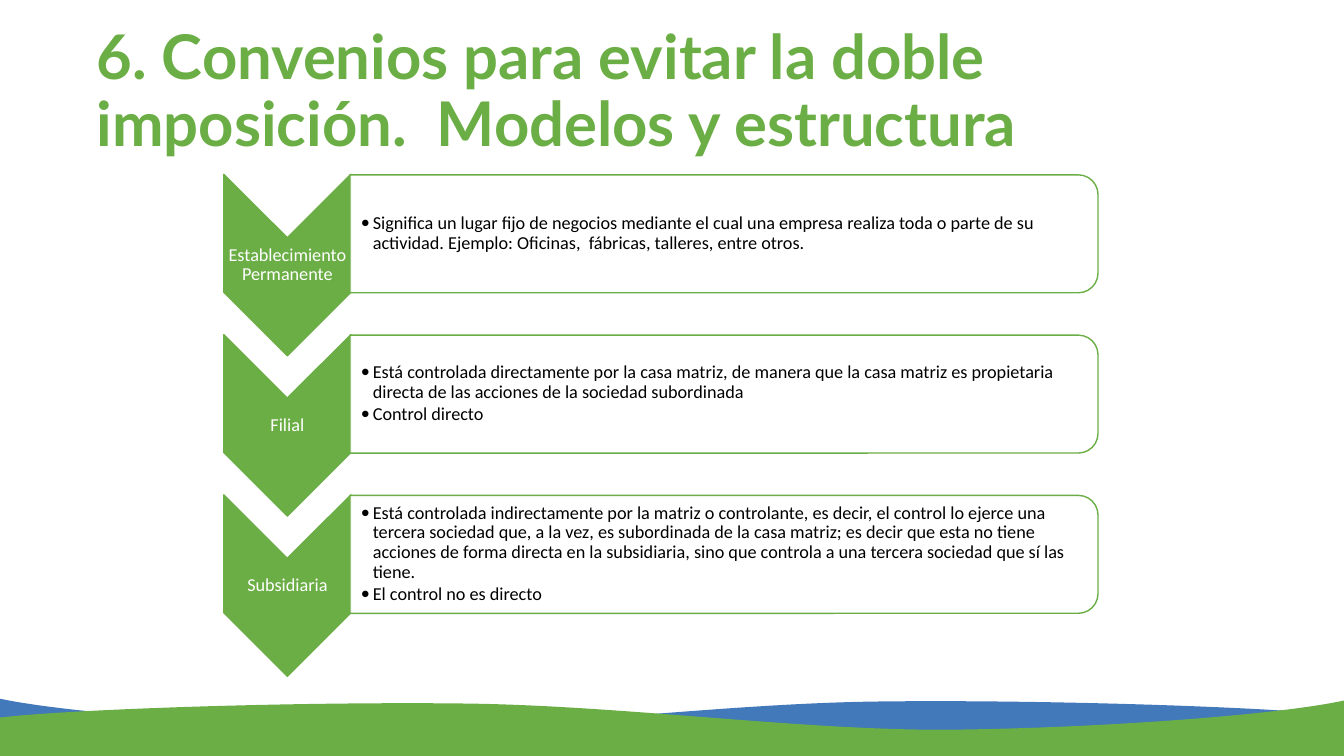
from lxml.etree import SubElement
from pptx import Presentation
from pptx.dml.color import RGBColor
from pptx.enum.shapes import MSO_SHAPE
from pptx.enum.text import MSO_ANCHOR, PP_ALIGN
from pptx.oxml.ns import qn
from pptx.util import Inches, Pt

GREEN = RGBColor(0x6B, 0xAE, 0x45)
BLUE = RGBColor(0x42, 0x79, 0xBB)
WHITE = RGBColor(0xFF, 0xFF, 0xFF)
BLACK = RGBColor(0, 0, 0)

# Start of the wave, three Bézier segments of three points each, lower corners
WAVE = [
    (13.33, 7.1),
    (12.56, 7.01), (10.26, 6.94), (8.7, 6.96),
    (7.15, 6.98), (5.43, 7.22), (3.98, 7.22),
    (2.53, 7.21), (0.68, 7.08), (-0.01, 6.93),
    (-0.01, 7.5), (13.33, 7.5),
]

ITEMS = [
    ("Establecimiento Permanente", [
        "Significa un lugar fijo de negocios mediante el cual una empresa realiza "
        "toda o parte de su actividad. Ejemplo: Oficinas,  fábricas, talleres, "
        "entre otros."]),
    ("Filial", [
        "Está controlada directamente por la casa matriz, de manera que la casa "
        "matriz es propietaria directa de las acciones de la sociedad subordinada",
        "Control directo"]),
    ("Subsidiaria", [
        "Está controlada indirectamente por la matriz o controlante, es decir, el "
        "control lo ejerce una tercera sociedad que, a la vez, es subordinada de la "
        "casa matriz; es decir que esta no tiene acciones de forma directa en la "
        "subsidiaria, sino que controla a una tercera sociedad que sí las tiene.",
        "El control no es directo"]),
]
TOP, PITCH = 1.79, 1.59

prs = Presentation()
prs.slide_width = Inches(13.33)
prs.slide_height = Inches(7.5)
slide = prs.slides.add_slide(prs.slide_layouts[6])
shapes = slide.shapes


def add_text(box, lines, size, font, color, bold=False, align=PP_ALIGN.LEFT, pad=None):
    """Add a text box with one paragraph per line; pad is (left, other sides)."""
    frame = shapes.add_textbox(*[Inches(v) for v in box]).text_frame
    frame.word_wrap = True
    frame.vertical_anchor = MSO_ANCHOR.MIDDLE
    if pad:
        frame.margin_left = Inches(pad[0])
        frame.margin_top = frame.margin_right = frame.margin_bottom = Inches(pad[1])
    for i, line in enumerate(lines):
        para = frame.add_paragraph() if i else frame.paragraphs[0]
        para.alignment = align
        para.line_spacing = 0.9
        run = para.add_run()
        run.text = line
        run.font.size = Pt(size)
        run.font.name = font
        run.font.bold = bold
        run.font.color.rgb = color
    return frame


def add_turned(kind, mid_x, mid_y, width, height, fill):
    """Add a green-edged shape turned by 90 degrees about its middle."""
    shape = shapes.add_shape(kind, Inches(mid_x - width / 2), Inches(mid_y - height / 2),
                             Inches(width), Inches(height))
    shape.rotation = 90
    shape.shadow.inherit = False
    shape.fill.solid()
    shape.fill.fore_color.rgb = fill
    shape.line.color.rgb = GREEN
    shape.line.width = Pt(1)
    return shape


# Footer waves: the green one mirrors the blue one, slightly lower
mirror = [(13.32 - x, y + 0.02) for x, y in WAVE]
for points, color in ((WAVE, BLUE), (mirror, GREEN)):
    spots = [(Inches(x), Inches(y)) for x, y in points]
    pen = shapes.build_freeform(*spots[0])
    pen.add_line_segments(spots[1:], close=True)
    wave = pen.convert_to_shape()
    wave.shadow.inherit = False
    wave.fill.solid()
    wave.fill.fore_color.rgb = color
    wave.line.fill.background()
    # Turn the first nine straight segments into three curves
    sides = list(wave._element.iter(qn("a:lnTo")))
    for first in (0, 3, 6):
        trio = sides[first:first + 3]
        trio[0].tag = qn("a:cubicBezTo")
        for side in trio[1:]:
            trio[0].append(side[0])
            side.getparent().remove(side)

add_text((0.86, 0.2, 11.5, 1.45),
         ["6. Convenios para evitar la doble imposición.  Modelos y estructura"],
         44, "Lato", GREEN, bold=True)

for row, (label, points) in enumerate(ITEMS):
    top = TOP + PITCH * row
    add_turned(MSO_SHAPE.CHEVRON, 2.85, top + 0.84, 1.8, 1.26, GREEN)
    add_text((2.22, top + 0.57, 1.26, 0.54), [label], 13, "Calibri", WHITE,
             align=PP_ALIGN.CENTER, pad=(0.01, 0.01))

    panel = add_turned(MSO_SHAPE.ROUND_2_SAME_RECTANGLE, 7.18, top + 0.53,
                       1.17, 7.42, WHITE)
    tint = panel.fill._xPr.find(qn("a:solidFill"))[0]
    SubElement(tint, qn("a:alpha")).set("val", "90000")

    frame = add_text((3.48, top, 7.36, 1.05), points, 13, "Calibri", BLACK,
                     pad=(0.1, 0.01))
    for para in frame.paragraphs:
        para.level = 1
        para.space_after = Pt(2)
        props = para._p.get_or_add_pPr()
        props.set("marL", str(Inches(0.12)))
        props.set("indent", str(Inches(-0.12)))
        SubElement(props, qn("a:buFont")).set("typeface", "Calibri")
        SubElement(props, qn("a:buChar")).set("char", "•")

prs.save("out.pptx")
